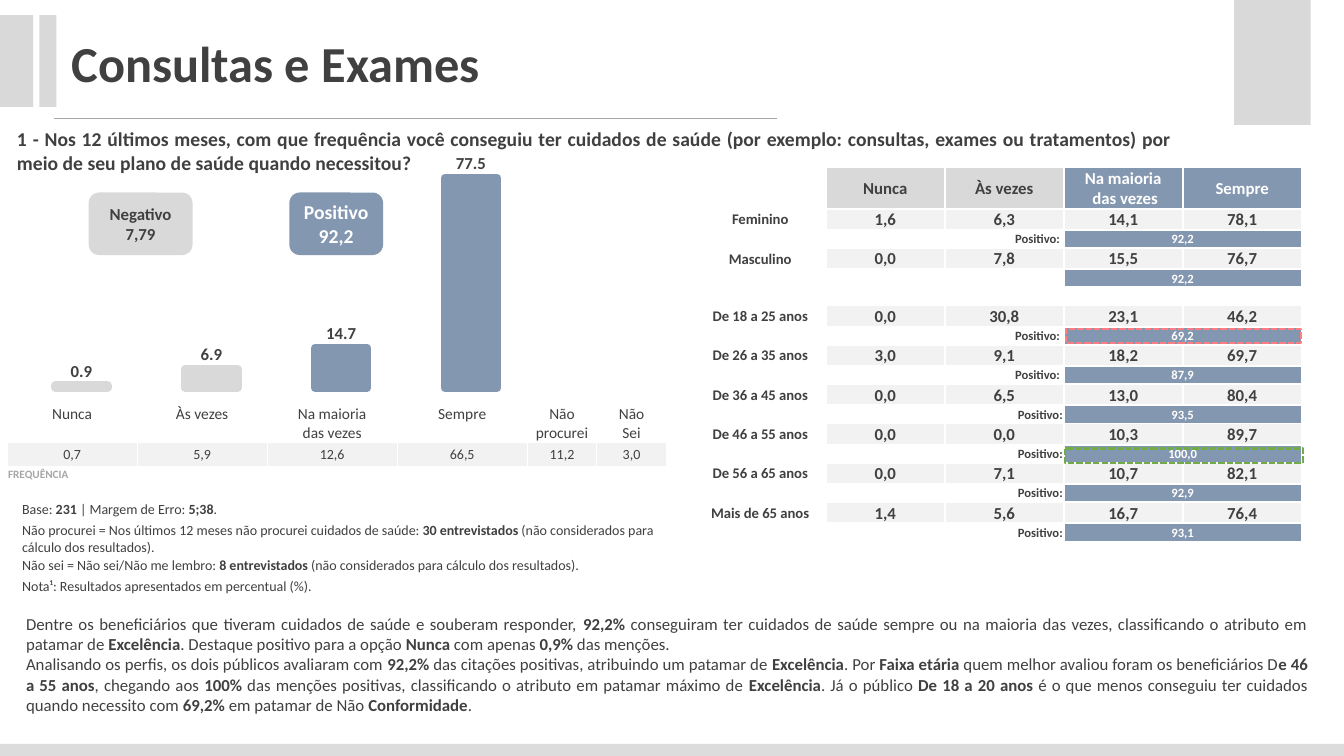
import pptx
import pptx.util
import pptx.chart.data
import pptx.dml.color
import pptx.enum.chart
import pptx.enum.dml
import pptx.enum.shapes
import pptx.enum.text
import pptx.oxml
import pptx.oxml.ns
import lxml.etree

Inches = pptx.util.Inches
Pt = pptx.util.Pt
RGBColor = pptx.dml.color.RGBColor
qn = pptx.oxml.ns.qn
Shape = pptx.enum.shapes.MSO_SHAPE
Align = pptx.enum.text.PP_ALIGN
Anchor = pptx.enum.text.MSO_ANCHOR

INK = RGBColor(0x40, 0x40, 0x40)
WHITE = RGBColor(0xFF, 0xFF, 0xFF)
BLUE = RGBColor(0x84, 0x97, 0xB0)
GREY = RGBColor(0xD9, 0xD9, 0xD9)
BASE = RGBColor(0xDC, 0xDC, 0xDC)
PALE = RGBColor(0xF2, 0xF2, 0xF2)
MID = RGBColor(0xA6, 0xA6, 0xA6)
GREEN = RGBColor(0x70, 0xAD, 0x47)
RED = RGBColor(0xFF, 0x7C, 0x80)
PLAIN = "{2D5ABB26-0587-4C30-8999-92F81FD0307C}"


def write(frame, text, size, color=INK, bold=False, align=Align.LEFT):
    for n, line in enumerate(text.split("\n")):
        par = frame.add_paragraph() if n else frame.paragraphs[0]
        par.alignment = align
        for k, part in enumerate(line.split("\v")):
            if k:
                par.add_line_break()
            for i, piece in enumerate(part.split("*")):
                if piece:
                    run = par.add_run()
                    run.text = piece
                    run.font.name = "Calibri"
                    run.font.size = Pt(size)
                    run.font.bold = bold or i % 2 == 1
                    run.font.color.rgb = color


def grid(left, top, cols, rows, edge):
    frame = slide.shapes.add_table(len(rows), len(cols), Inches(left), Inches(top),
                                   Inches(sum(cols)), Inches(sum(rows)))
    table = frame.table
    table.first_row = table.horz_banding = False
    table._tbl.tblPr.find(qn("a:tableStyleId")).text = PLAIN
    for col, wide in zip(table.columns, cols):
        col.width = Inches(wide)
    for row, high in zip(table.rows, rows):
        row.height = Inches(high)
    for cell in table.iter_cells():
        cell.margin_left = cell.margin_top = cell.margin_right = Inches(0.01)
        cell.margin_bottom = 0
        par = cell.text_frame.paragraphs[0]._p
        lxml.etree.SubElement(par, qn("a:endParaRPr"), sz="900")
        props = cell._tc.get_or_add_tcPr()
        for side in ("L", "R", "T", "B") if edge else ():
            line = lxml.etree.SubElement(props, qn("a:ln" + side), w=str(Pt(edge)))
            fill = lxml.etree.SubElement(line, qn("a:solidFill"))
            lxml.etree.SubElement(fill, qn("a:srgbClr"), val=str(WHITE))
        cell.fill.background()
    return table


deck = pptx.Presentation()
deck.slide_width = Inches(13.33)
deck.slide_height = Inches(7.5)
slide = deck.slides.add_slide(deck.slide_layouts[6])

for left, top, wide, high, color in [
    (0, 7.38, 13.33, 0.12, BASE), (0, 0.15, 0.33, 0.91, GREY),
    (0.39, 0.15, 0.17, 0.91, GREY), (12.24, 0, 0.76, 1.24, GREY),
]:
    bar = slide.shapes.add_shape(Shape.RECTANGLE, Inches(left), Inches(top),
                                 Inches(wide), Inches(high))
    bar.shadow.inherit = False
    bar.fill.solid()
    bar.fill.fore_color.rgb = color
    bar.line.fill.background()

rule = slide.shapes.add_connector(pptx.enum.shapes.MSO_CONNECTOR.STRAIGHT,
                                  Inches(0.54), Inches(1.17), Inches(7.71), Inches(1.17))
rule.line.color.rgb = MID
rule.line.width = Pt(0.5)
lxml.etree.SubElement(rule._element.spPr, qn("a:effectLst"))

data = pptx.chart.data.CategoryChartData(number_format="0.0")
data.categories = ["1", "2", "3", "4"]
data.add_series("Series 1", [77.5, 14.7, 6.9, 0.9])
chart = slide.shapes.add_chart(pptx.enum.chart.XL_CHART_TYPE.COLUMN_CLUSTERED, Inches(0),
                               Inches(1.16), Inches(5.48), Inches(3.36), data).chart
chart.has_legend = chart.has_title = False
chart.font.name = "Calibri"
chart.font.size = Pt(10)
chart.category_axis.reverse_order = True
chart.category_axis.visible = False
scale = chart.value_axis
scale.has_major_gridlines = False
scale.minimum_scale, scale.maximum_scale = 0, 90
scale.visible = False
plot = chart.plots[0]
plot.gap_width, plot.overlap = 150, -25
plot.vary_by_categories = False
for n, color in enumerate([BLUE, BLUE, GREY, GREY]):
    form = plot.series[0].points[n].format
    form.fill.solid()
    form.fill.fore_color.rgb = color
    form.line.color.rgb = color
    form.line.width = Pt(6)
    lxml.etree.SubElement(form.line._ln, qn("a:round"))
plot.has_data_labels = True
labels = plot.data_labels
labels.show_value = True
labels.number_format = "0.0"
labels.number_format_is_linked = False
labels.position = pptx.enum.chart.XL_LABEL_POSITION.OUTSIDE_END
labels.font.name = "Calibri"
labels.font.size = Pt(12)
labels.font.bold = True
labels.font.color.rgb = INK
area = chart._chartSpace.chart.plotArea
for old in area.findall(qn("c:layout")):
    area.remove(old)
layout = lxml.etree.Element(qn("c:layout"))
area.insert(0, layout)
manual = lxml.etree.SubElement(layout, qn("c:manualLayout"))
for tag, val in [("layoutTarget", "inner"), ("xMode", "edge"), ("yMode", "edge"),
                 ("x", "0.03"), ("y", "0.08"), ("w", "0.94"), ("h", "0.72")]:
    lxml.etree.SubElement(manual, qn("c:" + tag), val=val)

ASK = "1 - Nos 12 últimos meses, com que frequência você conseguiu ter cuidados de saúde (por exemplo: consultas, exames ou tratamentos) por meio de seu plano de saúde quando necessitou?"
BODY = """Dentre os beneficiários que tiveram cuidados de saúde e souberam responder, *92,2%* conseguiram ter cuidados de saúde sempre ou na maioria das vezes, classificando o atributo em patamar de *Excelência*. Destaque positivo para a opção *Nunca* com apenas *0,9%* das menções.
Analisando os perfis, os dois públicos avaliaram com *92,2%* das citações positivas, atribuindo um patamar de *Excelência*. Por *Faixa etária* quem melhor avaliou foram os beneficiários D*e 46 a 55 anos*, chegando aos *100%* das menções positivas, classificando o atributo em patamar máximo de *Excelência*. Já o público *De 18 a 20 anos *é o que menos conseguiu ter cuidados quando necessito com *69,2% *em patamar de Não *Conformidade*."""
for left, top, wide, high, text, size, bold, align, pad in [
    (0.07, 1.21, 11.65, 0.58, ASK, 14, True, Align.JUSTIFY, 0.05),
    (0.61, 0.27, 4.3, 0.71, "Consultas e Exames", 36, True, Align.LEFT, 0.05),
    (0.16, 6.04, 12.91, 1.11, BODY, 12, False, Align.JUSTIFY, 0.05),
]:
    frame = slide.shapes.add_textbox(Inches(left), Inches(top), Inches(wide),
                                     Inches(high)).text_frame
    frame.word_wrap = True
    frame.margin_top = frame.margin_bottom = Inches(pad)
    write(frame, text, size, INK, bold, align)

notes = grid(0.21, 4.96, [6.54], [0.21, 0.34, 0.21, 0.21], 0)
for n, text in enumerate([
    "Base: *231* | Margem de Erro: *5;38*.",
    "Não procurei = Nos últimos 12 meses não procurei cuidados de saúde: *30 entrevistados* (não considerados para cálculo dos resultados).",
    "Não sei = Não sei/Não me lembro: *8 entrevistados* (não considerados para cálculo dos resultados).",
    "Nota¹: Resultados apresentados em percentual (%).",
]):
    write(notes.cell(n, 0).text_frame, text, 10)

freq = grid(0.07, 4.01, [1.29] * 4 + [0.69] * 2, [0.38, 0.24, 0.24], 1)
for n, (name, val) in enumerate([
    ("Nunca", "0,7"), ("Às vezes", "5,9"), ("Na maioria\ndas vezes", "12,6"),
    ("Sempre", "66,5"), ("Não procurei", "11,2"), ("Não\nSei", "3,0"),
]):
    write(freq.cell(0, n).text_frame, name, 11, align=Align.CENTER)
    cell = freq.cell(1, n)
    cell.fill.solid()
    cell.fill.fore_color.rgb = PALE
    cell.vertical_anchor = Anchor.MIDDLE
    write(cell.text_frame, val, 10, align=Align.CENTER)
freq.cell(2, 0).merge(freq.cell(2, 5))
write(freq.cell(2, 0).text_frame, "FREQUÊNCIA", 8, MID, True)

PAIR = [0.21, 0.18]
people = grid(6.89, 1.66, [1.3] + [1.18] * 4, [0.4] + PAIR * 2 + [0.18] + PAIR * 6, 1.5)
for n, (name, back, color) in enumerate([
    ("Nunca", GREY, INK), ("Às vezes", GREY, INK),
    ("Na maioria\v das vezes", BLUE, WHITE), ("Sempre", BLUE, WHITE),
], 1):
    cell = people.cell(0, n)
    cell.fill.solid()
    cell.fill.fore_color.rgb = back
    cell.vertical_anchor = Anchor.MIDDLE
    write(cell.text_frame, name, 12, color, True, Align.CENTER)
for row, name, vals, good, tag in [
    (1, "Feminino", "1,6 6,3 14,1 78,1", "92,2", "Positivo: "),
    (3, "Masculino", "0,0 7,8 15,5 76,7", "92,2", ""),
    (6, "De 18 a 25 anos", "0,0 30,8 23,1 46,2", "69,2", "Positivo: "),
    (8, "De 26 a 35 anos", "3,0 9,1 18,2 69,7", "87,9", "Positivo: "),
    (10, "De 36 a 45 anos", "0,0 6,5 13,0 80,4", "93,5", "Positivo:"),
    (12, "De 46 a 55 anos", "0,0 0,0 10,3 89,7", "100,0", "Positivo:"),
    (14, "De 56 a 65 anos", "0,0 7,1 10,7 82,1", "92,9", "Positivo:"),
    (16, "Mais de 65 anos", "1,4 5,6 16,7 76,4", "93,1", "Positivo:"),
]:
    head = people.cell(row, 0)
    head.vertical_anchor = Anchor.MIDDLE
    write(head.text_frame, name, 10.5, INK, True, Align.CENTER)
    for n, val in enumerate(vals.split(), 1):
        cell = people.cell(row, n)
        cell.fill.solid()
        cell.fill.fore_color.rgb = PALE
        cell.vertical_anchor = Anchor.BOTTOM
        write(cell.text_frame, val, 12, INK, True, Align.CENTER)
    if row < 10:
        people.cell(row + 1, 1).merge(people.cell(row + 1, 2))
    side = people.cell(row + 1, 1 if row < 10 else 2)
    side.vertical_anchor = Anchor.MIDDLE
    write(side.text_frame, tag, 9, INK, True, Align.RIGHT)
    total = people.cell(row + 1, 3)
    total.merge(people.cell(row + 1, 4))
    total.fill.solid()
    total.fill.fore_color.rgb = BLUE
    total.vertical_anchor = Anchor.MIDDLE
    write(total.text_frame, good, 9, WHITE, True, Align.CENTER)
for n in (1, 3):
    people.cell(5, n).merge(people.cell(5, n + 1))

for left, wide, text, size, back, color in [
    (2.87, 0.93, "Positivo 92,2", 14, BLUE, WHITE),
    (0.88, 1.03, "Negativo 7,79", 12, GREY, INK),
]:
    badge = slide.shapes.add_shape(Shape.ROUNDED_RECTANGLE, Inches(left), Inches(1.91),
                                   Inches(wide), Inches(0.62))
    badge.shadow.inherit = False
    badge.fill.solid()
    badge.fill.fore_color.rgb = back
    badge.line.fill.background()
    badge.text_frame.word_wrap = True
    badge.text_frame.vertical_anchor = Anchor.MIDDLE
    write(badge.text_frame, text, size, color, True, Align.CENTER)

for left, top, wide, color in [(10.56, 4.45, 2.36, GREEN), (10.57, 3.26, 2.33, RED)]:
    mark = slide.shapes.add_shape(Shape.RECTANGLE, Inches(left), Inches(top),
                                  Inches(wide), Inches(0.14))
    mark.shadow.inherit = False
    mark.fill.background()
    mark.line.color.rgb = color
    mark.line.width = Pt(1.5)
    mark.line.dash_style = pptx.enum.dml.MSO_LINE.SQUARE_DOT

deck.save("out.pptx")
